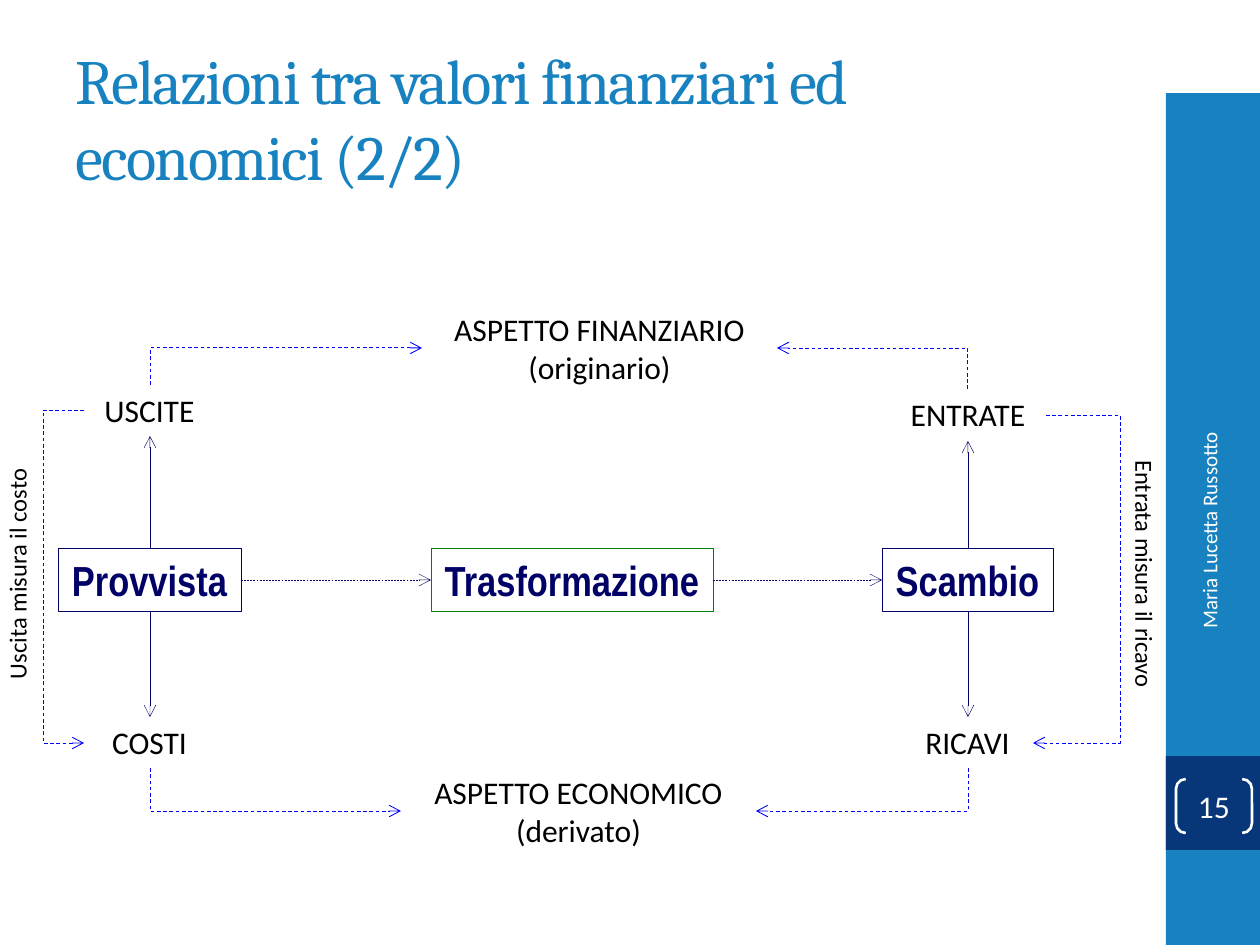
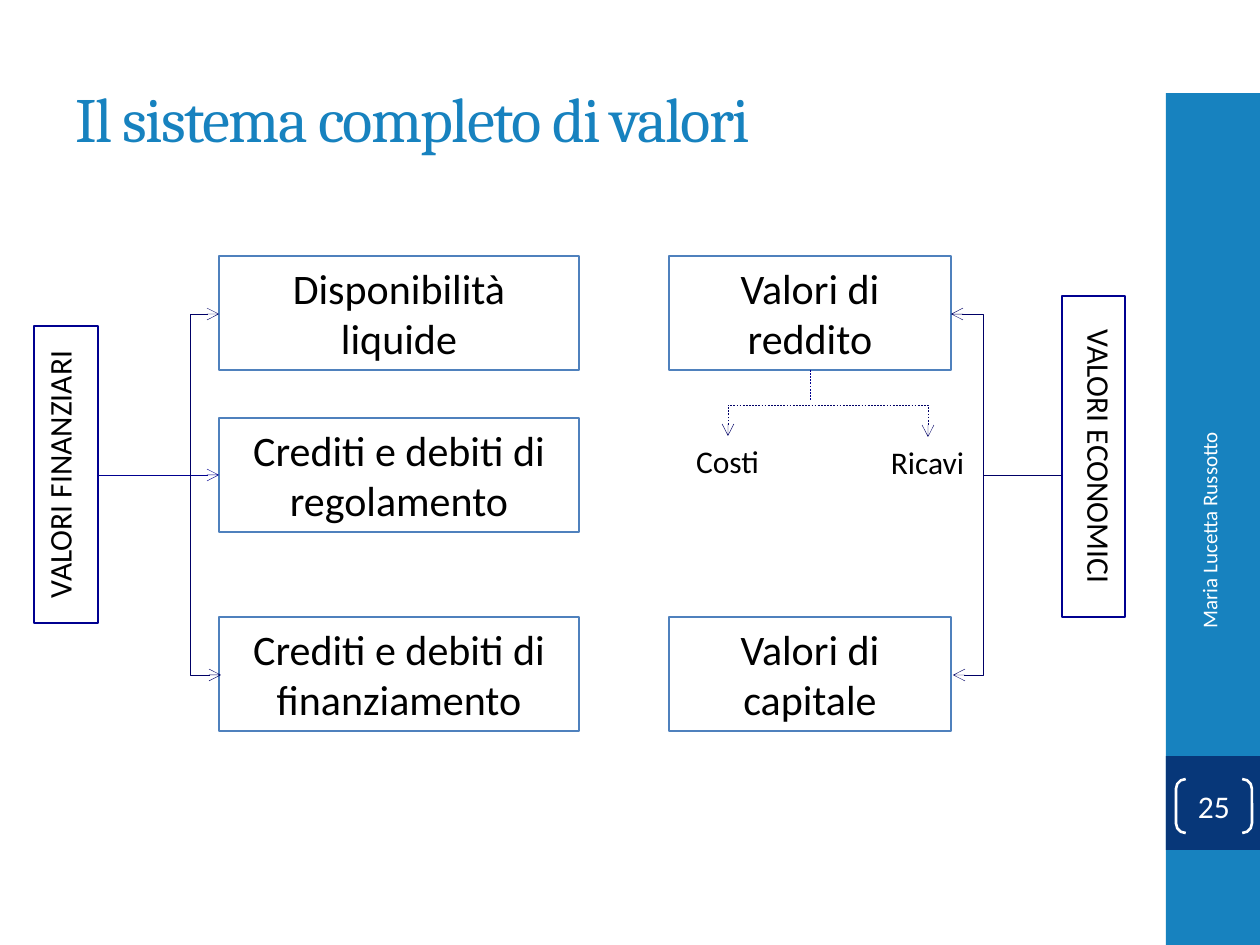
from lxml import etree
from pptx import Presentation
from pptx.dml.color import RGBColor
from pptx.enum.dml import MSO_LINE
from pptx.enum.shapes import MSO_CONNECTOR, MSO_SHAPE as SHAPE
from pptx.enum.text import MSO_ANCHOR as ANCHOR, PP_ALIGN as ALIGN
from pptx.oxml.ns import qn
from pptx.util import Emu, Pt

EMU_PER_PX = 914400 / 126
BLUE, NAVY, WHITE, BLACK = "1782BF", "073779", "FFFFFF", "000000"
INK, INDIGO, BRIGHT, GREEN, STEEL = "000066", "000090", "0000FF", "008000", "4F81BD"
BODY, HEADING, NARROW = "Calibri", "Cambria", "Arial Narrow"


def px(length):
    return Emu(round(length * EMU_PER_PX))


def color(hex_string):
    return RGBColor.from_string(hex_string)


def write(shape, text, size, ink=BLACK, font=BODY, bold=False, align=ALIGN.CENTER,
          anchor=ANCHOR.TOP, wrap=True, direction=None):
    frame = shape.text_frame
    frame.word_wrap = wrap
    frame.vertical_anchor = anchor
    frame.text = text
    if direction:
        frame._txBody.bodyPr.set("vert", direction)
    for paragraph in frame.paragraphs:
        paragraph.alignment = align
        paragraph.font.size = Pt(size)
        paragraph.font.name = font
        paragraph.font.bold = bold
        paragraph.font.color.rgb = color(ink)
    return frame


def add_box(slide, bounds, fill=None, line=None, width=0.75, kind=SHAPE.RECTANGLE):
    shape = slide.shapes.add_shape(kind, *map(px, bounds))
    shape.shadow.inherit = False
    if fill:
        shape.fill.solid()
        shape.fill.fore_color.rgb = color(fill)
    else:
        shape.fill.background()
    if line:
        shape.line.color.rgb = color(line)
        shape.line.width = Pt(width)
    else:
        shape.line.fill.background()
    return shape


def add_label(slide, bounds, text, size=18, **style):
    label = slide.shapes.add_textbox(*map(px, bounds))
    write(label, text, size, **style)
    return label


def add_route(slide, points, ink=INK, width=0.25, dashed=False, ends=("tailEnd",)):
    corners = [(px(x), px(y)) for x, y in points]
    if len(corners) == 2:
        route = slide.shapes.add_connector(MSO_CONNECTOR.STRAIGHT, *corners[0], *corners[1])
        etree.SubElement(route._element.spPr, qn("a:effectLst"))
    else:
        builder = slide.shapes.build_freeform(*corners[0])
        builder.add_line_segments(corners[1:], close=False)
        route = builder.convert_to_shape()
        route.shadow.inherit = False
        route.fill.background()
    route.line.color.rgb = color(ink)
    route.line.width = Pt(width)
    if dashed:
        route.line.dash_style = MSO_LINE.DASH
    outline = route._element.spPr.find(qn("a:ln"))
    for end in ends:
        etree.SubElement(outline, qn(f"a:{end}"), type="arrow")


def add_base(presentation, title, number):
    slide = presentation.slides.add_slide(presentation.slide_layouts[6])
    add_box(slide, (1166, 93, 94, 852), fill=BLUE)
    add_box(slide, (1166, 756, 94, 94), fill=NAVY)
    heading = add_label(slide, (63, 38, 1050, 158), title, 36, ink=BLUE, font=HEADING,
                        align=ALIGN.LEFT, anchor=ANCHOR.MIDDLE)
    for run in heading.text_frame.paragraphs[0].runs:
        run._r.get_or_add_rPr().set("spc", "-100")
    author = add_label(slide, (1046, 558, 326, 50), "Maria Lucetta Russotto", 12,
                       ink=WHITE, align=ALIGN.RIGHT, anchor=ANCHOR.MIDDLE)
    author.rotation = 270
    badge = add_box(slide, (1176, 779, 76, 54), line=WHITE, width=1.5,
                    kind=SHAPE.DOUBLE_BRACKET)
    badge.adjustments[0] = 0.18
    frame = write(badge, str(number), 18, ink=WHITE, anchor=ANCHOR.MIDDLE)
    frame.margin_left = frame.margin_right = frame.margin_top = frame.margin_bottom = 0
    return slide


def build_relations(presentation):
    slide = add_base(presentation, "Relazioni tra valori finanziari ed economici (2/2)", 15)
    for left, width, line, phase in (
            (58, 183, INK, "Provvista"),
            (431, 282, GREEN, "Trasformazione"),
            (882, 171, INK, "Scambio")):
        box = add_box(slide, (left, 548, width, 63), line=line, width=0.25)
        write(box, phase, 24, ink=INK, font=NARROW, bold=True, anchor=ANCHOR.BOTTOM, wrap=False)

    for bounds, text in (
            ((84, 385, 131, 50), "USCITE"),
            ((890, 389, 156, 50), "ENTRATE"),
            ((84, 717, 131, 50), "COSTI"),
            ((902, 717, 131, 50), "RICAVI"),
            ((422, 304, 355, 89), "ASPETTO FINANZIARIO\n(originario)"),
            ((401, 767, 355, 89), "ASPETTO ECONOMICO\n(derivato)")):
        add_label(slide, bounds, text)
    add_label(slide, (-4, 436, 55, 276), "Uscita misura il costo", 14, direction="vert270")
    add_label(slide, (1111, 436, 55, 276), "Entrata misura il ricavo", 14, direction="vert")

    for x, top in ((150, 436), (968, 441)):
        add_route(slide, [(x, 548), (x, top)])
        add_route(slide, [(x, 611), (x, 717)])
    for start, end in ((241, 431), (713, 882)):
        add_route(slide, [(start, 580), (end, 580)], dashed=True)
    for points in (
            [(150, 385), (150, 348), (422, 348)],
            [(968, 389), (968, 348), (777, 348)],
            [(150, 768), (150, 811), (401, 811)],
            [(968, 768), (968, 811), (756, 811)],
            [(84, 410), (43, 410), (43, 743), (84, 743)],
            [(1046, 415), (1120, 415), (1120, 743), (1033, 743)]):
        add_route(slide, points, ink=BRIGHT, width=0.5, dashed=True)


def build_value_system(presentation):
    slide = add_base(presentation, "Il sistema completo di valori", 25)
    for left, top, width, text in (
            (219, 256, 360, "Disponibilità liquide"),
            (219, 418, 360, "Crediti e debiti di regolamento"),
            (219, 617, 360, "Crediti e debiti di finanziamento"),
            (669, 256, 282, "Valori di reddito"),
            (669, 617, 282, "Valori di capitale")):
        write(add_box(slide, (left, top, width, 114), line=STEEL), text, 24)
    for bounds, text, direction in (
            ((34, 326, 64, 297), "VALORI FINANZIARI", "vert270"),
            ((1062, 296, 63, 321), "VALORI ECONOMICI", "vert")):
        write(add_box(slide, bounds, line=INDIGO), text, 18, direction=direction)
    add_label(slide, (669, 436, 117, 50), "Costi")
    add_label(slide, (869, 437, 117, 50), "Ricavi")

    both = ("headEnd", "tailEnd")
    add_route(slide, [(98, 475), (219, 475)], ink=INDIGO)
    add_route(slide, [(221, 675), (190, 675), (190, 314), (219, 314)], ends=both)
    add_route(slide, [(1062, 475), (983, 475)], ends=())
    add_route(slide, [(951, 314), (983, 314), (983, 675), (953, 675)], ends=both)
    add_route(slide, [(810, 370), (810, 400)], ink=INDIGO, dashed=True, ends=())
    add_route(slide, [(728, 436), (728, 405), (928, 405), (928, 437)], dashed=True, ends=both)


def main():
    presentation = Presentation()
    presentation.slide_width = px(1260)
    presentation.slide_height = px(945)
    build_relations(presentation)
    build_value_system(presentation)
    presentation.save("out.pptx")


if __name__ == "__main__":
    main()
